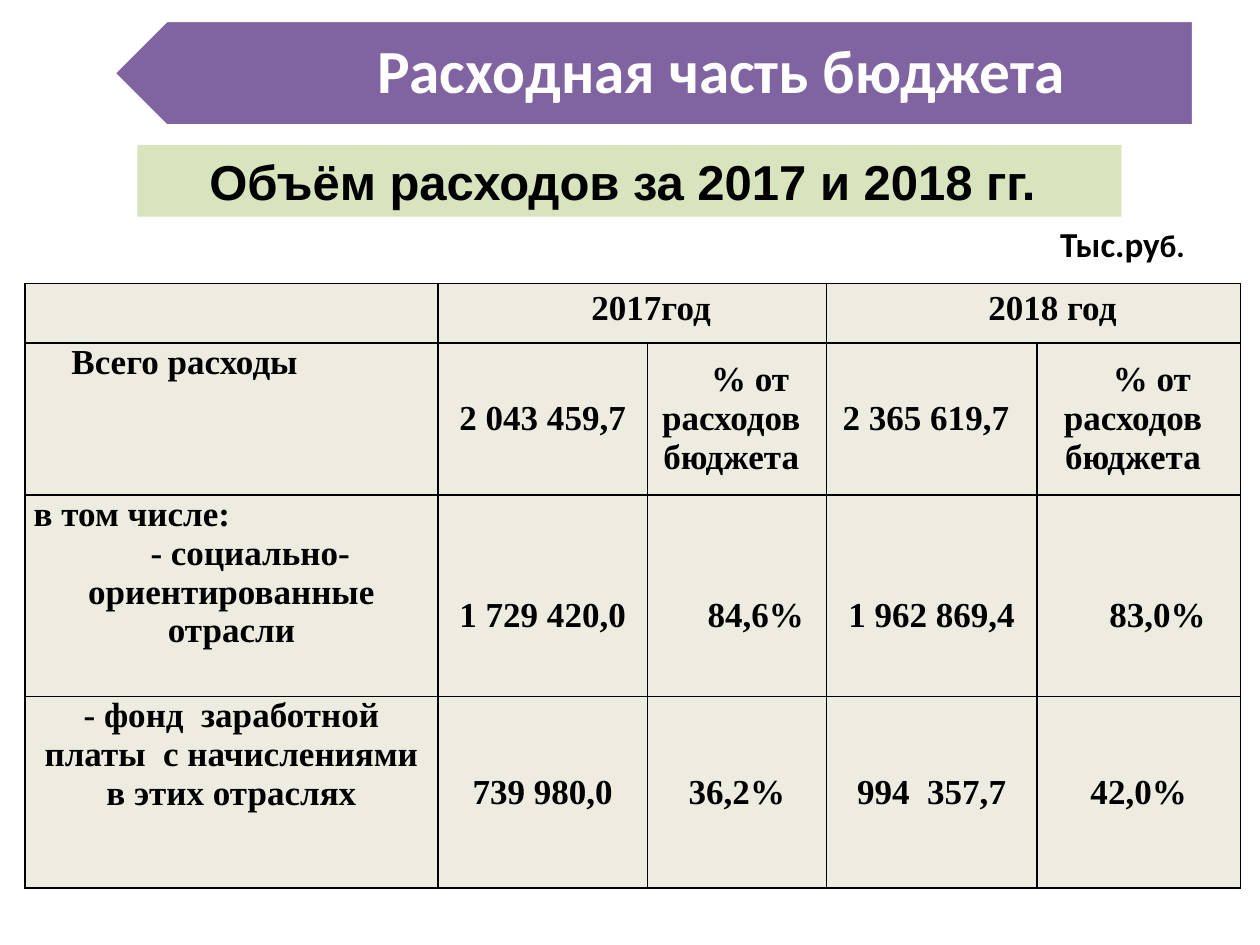
import pptx
import pptx.util
import pptx.dml.color
import pptx.enum.shapes
import pptx.enum.text
import lxml.etree
from pptx.oxml.ns import qn

Cm, Pt = pptx.util.Cm, pptx.util.Pt
RGB = pptx.dml.color.RGBColor.from_string
Shape = pptx.enum.shapes.MSO_SHAPE
Align = pptx.enum.text.PP_ALIGN
Mid = pptx.enum.text.MSO_ANCHOR.MIDDLE
Top = pptx.enum.text.MSO_ANCHOR.TOP

hues = {"arrow": "8064A2", "band": "D7E4BD", "cell": "EEECE1",
        "ink": "000000", "white": "FFFFFF"}


def put(item, vals):
    for key, val in vals.items():
        setattr(item, key, val)


def write(par, text, size, face, hue="ink"):
    """Add a bold run to the paragraph."""
    run = par.add_run()
    run.text = text
    put(run.font, {"size": Pt(size), "name": face, "bold": True})
    run.font.color.rgb = RGB(hues[hue])


deck = pptx.Presentation()
put(deck, {"slide_width": Cm(25.4), "slide_height": Cm(19.05)})
slide = deck.slides.add_slide(deck.slide_layouts[5])
shapes = slide.shapes

# Title on an arrow that points left
title = shapes.title
arrow = shapes.add_shape(Shape.PENTAGON, Cm(2.29), Cm(0.41), Cm(21.77), Cm(2.13))
arrow.rotation = 180
arrow.shadow.inherit = False
arrow.fill.solid()
arrow.fill.fore_color.rgb = RGB(hues["arrow"])
arrow.line.color.rgb = RGB(hues["white"])
arrow.line.width = Pt(2)
title._element.addprevious(arrow._element)

put(title, {"left": Cm(2.82), "top": Cm(0.41), "width": Cm(21.23), "height": Cm(2.13)})
put(title.text_frame, {"margin_left": Cm(2.9), "margin_right": Cm(0.69),
                       "margin_top": Cm(0.38), "margin_bottom": Cm(0.38),
                       "vertical_anchor": Mid, "word_wrap": True,
                       "auto_size": pptx.enum.text.MSO_AUTO_SIZE.NONE})
head = title.text_frame.paragraphs[0]
put(head, {"alignment": Align.CENTER, "line_spacing": 0.9})
write(head, "Расходная часть бюджета", 35, "Calibri", "white")

# Subtitle band
band = shapes.add_shape(Shape.RECTANGLE, Cm(2.77), Cm(2.92), Cm(19.84), Cm(1.45))
band.shadow.inherit = False
band.fill.solid()
band.fill.fore_color.rgb = RGB(hues["band"])
band.line.fill.background()
put(band.text_frame, {"vertical_anchor": Mid, "word_wrap": True, "margin_right": Cm(0.53)})
par = band.text_frame.paragraphs[0]
par.alignment = Align.CENTER
write(par, "Объём расходов за 2017 и 2018 гг.", 28, "Arial")

# Unit of measure
unit = shapes.add_textbox(Cm(20.6), Cm(4.32), Cm(4.06), Cm(1.19))
put(unit.text_frame, {"vertical_anchor": Mid, "word_wrap": True})
par = unit.text_frame.paragraphs[0]
par.alignment = Align.CENTER
write(par, "Тыс.ру", 20, "Calibri")
write(par, "б.", 18, "Calibri")

# Budget table
share = "% от расходов бюджета"
rows = [
    ["", "2017год", "", "2018 год", ""],
    ["Всего расходы", "2 043 459,7", share, "2 365 619,7", share],
    ["в том числе:\n- социально-ориентированные отрасли",
     "1 729 420,0", "84,6%", "1 962 869,4", "83,0%"],
    ["- фонд  заработной платы  с начислениями в этих отраслях",
     "739 980,0", "36,2%", "994  357,7", "42,0%"],
]
wides = [8.33, 4.22, 3.61, 4.24, 4.11]
highs = [1.19, 3.07, 4.06, 3.86]
left = {"Всего расходы", "в том числе:"}
inset = {"Всего расходы", "- социально-ориентированные отрасли", share,
         "2017год", "2018 год", "84,6%", "83,0%"}

grid = shapes.add_table(4, 5, Cm(0.5), Cm(5.72), Cm(sum(wides)), Cm(sum(highs))).table
for col, wide in zip(grid.columns, wides):
    col.width = Cm(wide)
for row, high in zip(grid.rows, highs):
    row.height = Cm(high)
for c in (1, 3):
    grid.cell(0, c).merge(grid.cell(0, c + 1))

for r, row in enumerate(rows):
    for c, text in enumerate(row):
        cell = grid.cell(r, c)
        put(cell, {"margin_left": Cm(0.18),
                   "margin_right": Cm(0.41 if r == 1 and c > 1 else 0.18),
                   "margin_top": Cm(0.81 if r == 2 and c else 0),
                   "margin_bottom": 0,
                   "vertical_anchor": Mid if r and c else Top})
        props = cell._tc.get_or_add_tcPr()
        for side in ("a:lnL", "a:lnR", "a:lnT", "a:lnB"):
            edge = lxml.etree.SubElement(props, qn(side), w=str(Pt(1)))
            fill = lxml.etree.SubElement(edge, qn("a:solidFill"))
            lxml.etree.SubElement(fill, qn("a:srgbClr"), val=hues["ink"])
        cell.fill.solid()
        cell.fill.fore_color.rgb = RGB(hues["cell"])
        if not text:
            continue
        for n, line in enumerate(text.split("\n")):
            par = cell.text_frame.add_paragraph() if n else cell.text_frame.paragraphs[0]
            put(par, {"alignment": Align.LEFT if line in left else Align.CENTER,
                      "line_spacing": 1.0 if r else 1.15})
            if line in inset:
                par._p.get_or_add_pPr().set("indent", str(Cm(0.76)))
            write(par, line, 20, "Times New Roman")

deck.save("out.pptx")
